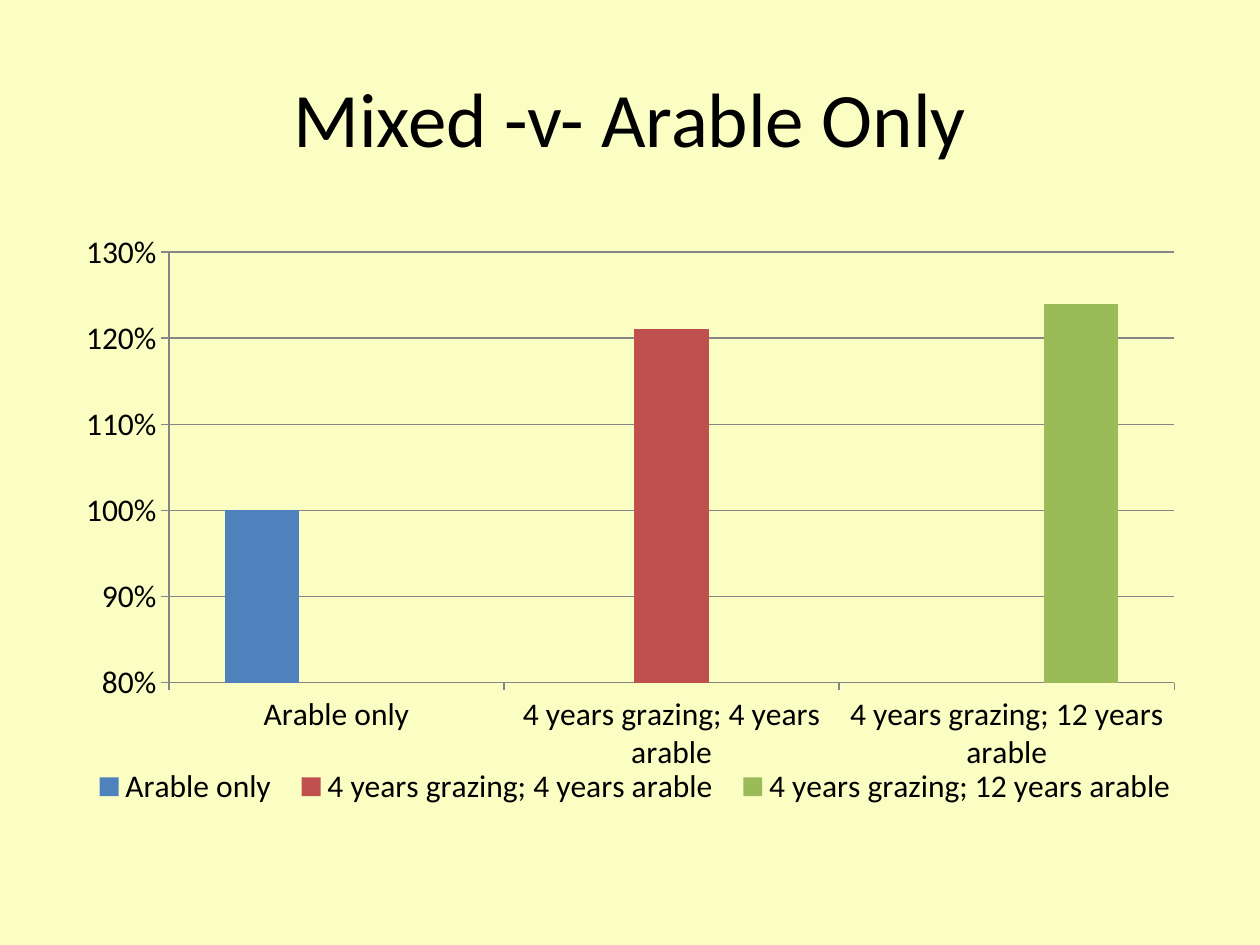
import lxml.etree
import pptx
import pptx.chart.data
import pptx.dml.color
import pptx.enum.chart
import pptx.enum.text
import pptx.oxml.ns
import pptx.util

Inches = pptx.util.Inches
Pt = pptx.util.Pt
rgb = pptx.dml.color.RGBColor.from_string
enum = pptx.enum.chart
qn = pptx.oxml.ns.qn

theme = {
    "font": "Calibri",
    "back": rgb("FAFEC2"),
    "text": rgb("000000"),
    "line": rgb("868686"),
    "bars": [rgb("4F81BD"), rgb("C0504D"), rgb("9BBB59")],
    "title": Pt(44),
    "body": Pt(18),
}


def place(part, index, target, box, size):
    """Fix a chart part at box (left, top, width, height) within size."""
    for old in part.findall(qn("c:layout")):
        part.remove(old)
    layout = lxml.etree.Element(qn("c:layout"))
    part.insert(index, layout)
    manual = lxml.etree.SubElement(layout, qn("c:manualLayout"))
    items = [("layoutTarget", target)] if target else []
    items += [("xMode", "edge"), ("yMode", "edge")]
    items += [(key, str(length / full))
              for key, length, full in zip("xywh", box, size * 2)]
    for key, value in items:
        lxml.etree.SubElement(manual, qn("c:" + key)).set("val", value)


# Slide and background
deck = pptx.Presentation()
deck.slide_width = Inches(10)
deck.slide_height = Inches(7.5)
slide = deck.slides.add_slide(deck.slide_layouts[5])
slide.background.fill.solid()
slide.background.fill.fore_color.rgb = theme["back"]

# Title
title = slide.shapes.title
title.left, title.top = Inches(0.5), Inches(0.3)
title.width, title.height = Inches(9), Inches(1.25)
frame = title.text_frame
frame.text = "Mixed -v- Arable Only"
frame.word_wrap = True
frame.vertical_anchor = pptx.enum.text.MSO_ANCHOR.MIDDLE
line = frame.paragraphs[0]
line.alignment = pptx.enum.text.PP_ALIGN.CENTER
font = line.runs[0].font
font.name, font.size = theme["font"], theme["title"]
font.color.rgb = theme["text"]

# Chart data: one series for each system, filled only in its own category
yields = {
    "Arable only": 1,
    "4 years grazing; 4 years arable": 1.21,
    "4 years grazing; 12 years arable": 1.24,
}
data = pptx.chart.data.CategoryChartData(number_format="0%")
data.categories = list(yields)
for name, value in yields.items():
    data.add_series(name, [value if cat == name else None for cat in yields])

# Chart
size = (Inches(9), Inches(4.95))
chart = slide.shapes.add_chart(
    enum.XL_CHART_TYPE.COLUMN_CLUSTERED,
    Inches(0.5), Inches(1.75), *size, data,
).chart
chart.has_title = False
chart.font.name, chart.font.size = theme["font"], theme["body"]
chart.font.color.rgb = theme["text"]
chart.has_legend = True
legend = chart.legend
legend.position = enum.XL_LEGEND_POSITION.BOTTOM
legend.include_in_layout = False

# Columns
plot = chart.plots[0]
plot.vary_by_categories = False
plot.gap_width = 150
for series, color in zip(plot.series, theme["bars"]):
    series.invert_if_negative = False
    series.format.fill.solid()
    series.format.fill.fore_color.rgb = color

# Axes and grid
scale = chart.value_axis
scale.minimum_scale, scale.maximum_scale = 0.8, 1.3
scale.major_unit = 0.1
scale.has_major_gridlines = True
scale.tick_labels.number_format = "0%"
scale.tick_labels.number_format_is_linked = False
for axis in (chart.category_axis, scale):
    axis.major_tick_mark = enum.XL_TICK_MARK.OUTSIDE
    axis.minor_tick_mark = enum.XL_TICK_MARK.NONE
for part in (chart.category_axis, scale, scale.major_gridlines):
    part.format.line.color.rgb = theme["line"]
    part.format.line.width = Pt(0.75)

# Plot and legend positions, the legend on a single row
area = chart.element.find(".//" + qn("c:plotArea"))
box = [Inches(n) for n in (0.84, 0.25, 7.98, 3.42)]
place(area, 0, "inner", box, size)
key = chart.element.find(".//" + qn("c:legend"))
box = [Inches(n) for n in (0.13, 4.32, 8.82, 0.35)]
place(key, 1, None, box, size)

deck.save("out.pptx")
